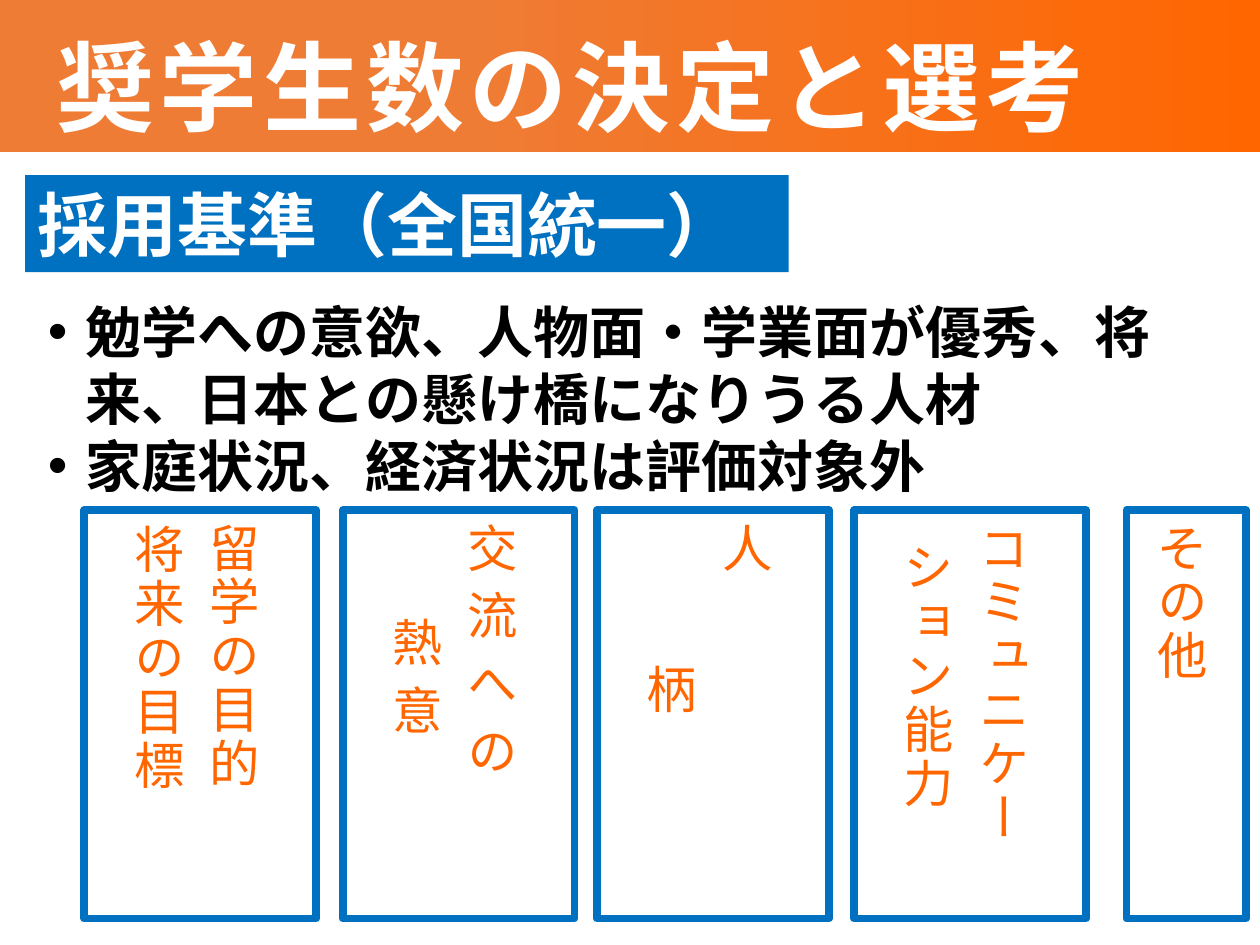
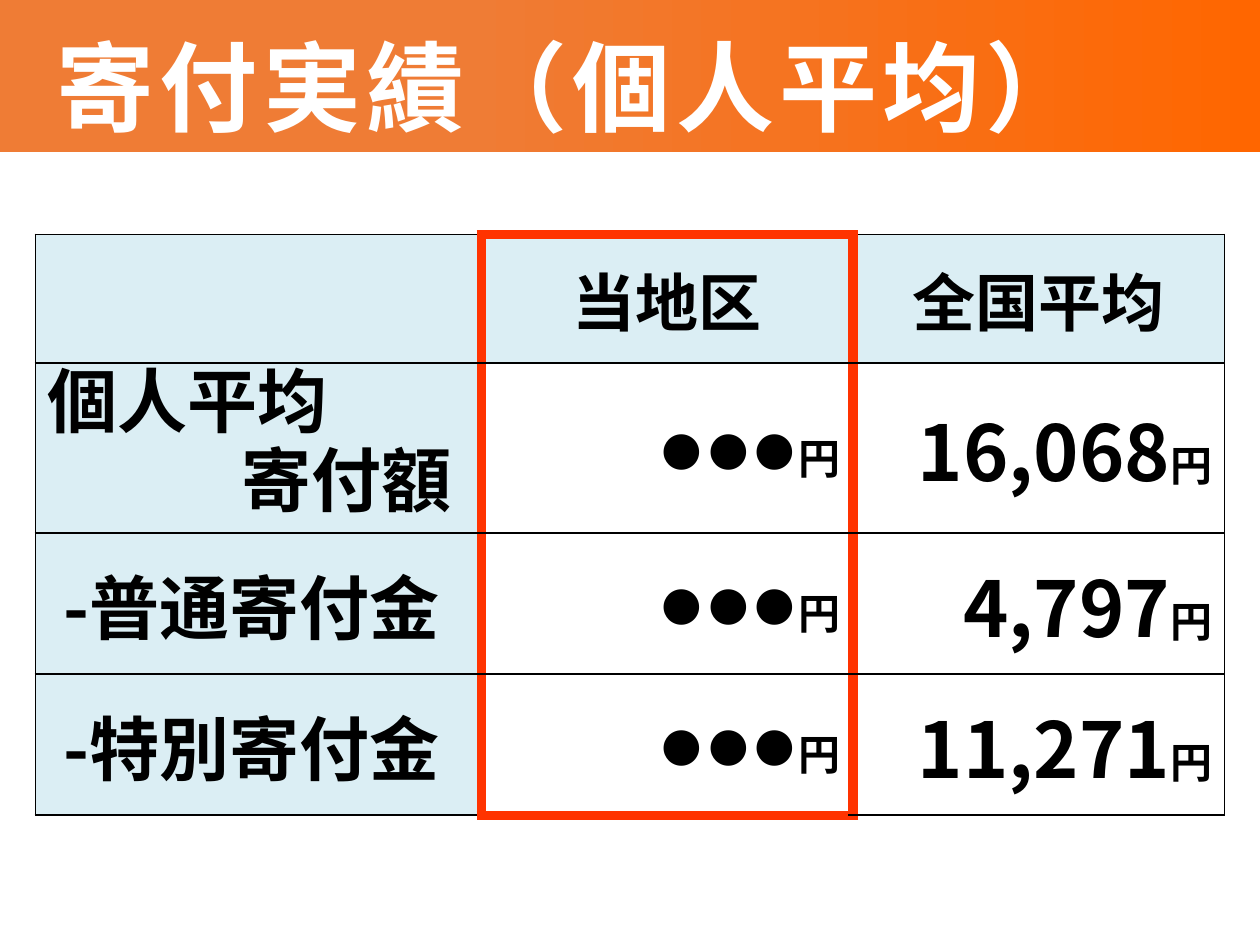
import dataclasses

import lxml.etree
import pptx
import pptx.dml.color
import pptx.enum.shapes
import pptx.enum.text
import pptx.oxml.ns
import pptx.util


@dataclasses.dataclass(frozen=True)
class Theme:
    font: str = "Noto Sans CJK JP"
    mark: str = "Calibri"
    white: str = "FFFFFF"
    black: str = "000000"
    blue: str = "0070C0"
    pale: str = "DBEEF4"
    light: str = "EF7C35"
    orange: str = "FF6600"
    red: str = "FF3300"
    title: int = 56
    label: int = 40
    body: int = 32
    box: int = 36
    head: int = 36
    value: int = 44
    unit: int = 24


T = Theme()
WIDE, HIGH = 10, 7.5
ALIGN = pptx.enum.text.PP_ALIGN
MIDDLE = pptx.enum.text.MSO_ANCHOR.MIDDLE

CRITERIA = {
    "title": "奨学生数の決定と選考",
    "label": "採用基準（全国統一）",
    "points": [
        "勉学への意欲、人物面・学業面が優秀、将来、日本との懸け橋になりうる人材",
        "家庭状況、経済状況は評価対象外",
    ],
    "boxes": [
        (0.67, 1.84, [("留学の目的\n将来の目標", {"track": 2})]),
        (2.72, 1.84, [("交流への\n熱意", {"track": 10})]),
        (4.74, 1.84, [("人", {"track": 86}), ("柄", {"track": 10})]),
        (6.78, 1.84, [("コミュニケーション能力", {"track": 2})]),
        (8.94, 0.95, [("その他", {"track": 2})]),
    ],
}

GIVING = {
    "title": "寄付実績（個人平均）",
    "heads": ["", "当地区", "全国平均"],
    "rows": [
        ("個人平均\n寄付額", "●●●", "16,068"),
        (" -普通寄付金", "●●●", "4,797"),
        (" -特別寄付金", "●●●", "11,271"),
    ],
    "unit": "円",
    "cols": [3.54, 2.95, 2.95],
    "heights": [1.02, 1.35, 1.12, 1.12],
}


def rgb(code):
    return pptx.dml.color.RGBColor.from_string(code)


def add(parent, tag, **attrs):
    node = lxml.etree.SubElement(parent, pptx.oxml.ns.qn(tag))
    for key, val in attrs.items():
        node.set(key, str(val))
    return node


def write(para, text, size=None, color=T.black, bold=True, font=T.font, track=0,
          small=False, align=None, line=None, hang=None):
    if align is not None:
        para.alignment = align
    if line is not None:
        para.line_spacing = pptx.util.Pt(line)
    if hang is not None:
        props = para._p.get_or_add_pPr()
        props.set("marL", str(pptx.util.Inches(hang)))
        props.set("indent", str(pptx.util.Inches(-hang)))
    for n, part in enumerate(text.split("\n")):
        if n:
            para.add_line_break()
        run = para.add_run()
        run.text = part
        run.font.size = pptx.util.Pt(size)
        run.font.bold = bold
        run.font.color.rgb = rgb(color)
        run.font.name = font
        props = run._r.get_or_add_rPr()
        add(props, "a:ea", typeface=font)
        if track:
            props.set("spc", str(track * 100))
        if small:
            props.set("cap", "small")


def place(shape, *spot):
    shape.left, shape.top, shape.width, shape.height = map(pptx.util.Inches, spot)


def block(slide, spot, fill, edge=None, weight=0):
    kind = pptx.enum.shapes.MSO_SHAPE.RECTANGLE
    shape = slide.shapes.add_shape(kind, *map(pptx.util.Inches, spot))
    shape.shadow.inherit = False
    shape.fill.solid()
    shape.fill.fore_color.rgb = rgb(fill)
    if edge:
        shape.line.color.rgb = rgb(edge)
        shape.line.width = pptx.util.Pt(weight)
    else:
        shape.line.fill.background()
    shape.text_frame.word_wrap = True
    shape.text_frame.vertical_anchor = MIDDLE
    return shape


def add_band(deck, slide):
    band = block(slide, (0, 0, WIDE, 1.21), T.orange)
    band.fill.gradient()
    band.fill.gradient_angle = 0
    stops = band.element.spPr.find(".//" + pptx.oxml.ns.qn("a:gsLst"))
    for stop in list(stops):
        stops.remove(stop)
    for share, color in ((0, T.light), (37, T.light), (100, T.orange)):
        add(add(stops, "a:gs", pos=share * 1000), "a:srgbClr", val=color)
    deck.slide_master.shapes.element.insert(2, band.element)


def start(deck, layout, title):
    slide = deck.slides.add_slide(deck.slide_layouts[layout])
    head = slide.shapes.title
    place(head, 0.35, 0.13, 9.46, 1.1)
    frame = head.text_frame
    frame.auto_size = pptx.enum.text.MSO_AUTO_SIZE.NONE
    frame.vertical_anchor = MIDDLE
    write(frame.paragraphs[0], title, size=T.title, color=T.white, track=3,
          align=ALIGN.LEFT)
    return slide


def show_rules(slide, data):
    label = block(slide, (0.2, 1.39, 6.06, 0.77), T.blue)
    write(label.text_frame.paragraphs[0], data["label"], size=T.label,
          color=T.white, align=ALIGN.JUSTIFY)

    body = slide.placeholders[1]
    place(body, 0.28, 2.25, 9.29, 1.72)
    frame = body.text_frame
    frame.auto_size = pptx.enum.text.MSO_AUTO_SIZE.NONE
    frame.margin_top = pptx.util.Inches(0.11)
    for n, point in enumerate(data["points"]):
        para = frame.add_paragraph() if n else frame.paragraphs[0]
        para.space_before = pptx.util.Pt(0)
        write(para, point, size=T.body, line=T.body * 1.2, hang=0.3)

    for left, width, runs in data["boxes"]:
        box = block(slide, (left, 4.05, width, 3.24), T.white, T.blue, 4.5)
        frame = box.text_frame
        frame._txBody.bodyPr.set("vert", "eaVert")
        for text, style in runs:
            write(frame.paragraphs[0], text, size=T.box, color=T.orange, bold=False,
                  small=True, align=ALIGN.CENTER, line=T.box * 1.2, **style)


def edge_cell(cell, row, col, last):
    red = {
        "L": col in (1, 2),
        "R": col in (0, 1),
        "T": col == 1 and row == 0,
        "B": col == 1 and row == last,
    }
    props = cell._tc.get_or_add_tcPr()
    for side, strong in red.items():
        line = add(props, "a:ln" + side, w=pptx.util.Pt(6 if strong else 1))
        add(add(line, "a:solidFill"), "a:srgbClr", val=T.red if strong else T.black)


def fill_cell(cell, text, row, col, unit):
    para = cell.text_frame.paragraphs[0]
    if not text:
        return
    if row == 0:
        write(para, text, size=T.head, align=ALIGN.CENTER)
    elif col == 0:
        split = "\n" in text
        write(para, text, size=T.label, line=45 if split else None,
              hang=1.54 if split else None)
    else:
        mark = col == 1
        write(para, text, size=T.value, bold=not mark,
              font=T.mark if mark else T.font, align=ALIGN.RIGHT)
        write(para, unit, size=T.unit)


def show_table(slide, data):
    rows = [data["heads"], *data["rows"]]
    cols, heights = data["cols"], data["heights"]
    spot = (0.28, 1.86, sum(cols), sum(heights))
    table = slide.shapes.add_table(len(rows), len(cols),
                                   *map(pptx.util.Inches, spot)).table
    table.first_row = table.horz_banding = False
    for col, width in zip(table.columns, cols):
        col.width = pptx.util.Inches(width)
    for row, height in zip(table.rows, heights):
        row.height = pptx.util.Inches(height)
    for r, texts in enumerate(rows):
        for c, text in enumerate(texts):
            cell = table.cell(r, c)
            cell.vertical_anchor = MIDDLE
            edge_cell(cell, r, c, len(rows) - 1)
            cell.fill.solid()
            cell.fill.fore_color.rgb = rgb(T.white if r and c else T.pale)
            fill_cell(cell, text, r, c, data["unit"])


def main():
    deck = pptx.Presentation()
    deck.slide_width = pptx.util.Inches(WIDE)
    deck.slide_height = pptx.util.Inches(HIGH)
    first = start(deck, 1, CRITERIA["title"])
    add_band(deck, first)
    show_rules(first, CRITERIA)
    show_table(start(deck, 5, GIVING["title"]), GIVING)
    deck.save("out.pptx")


if __name__ == "__main__":
    main()
